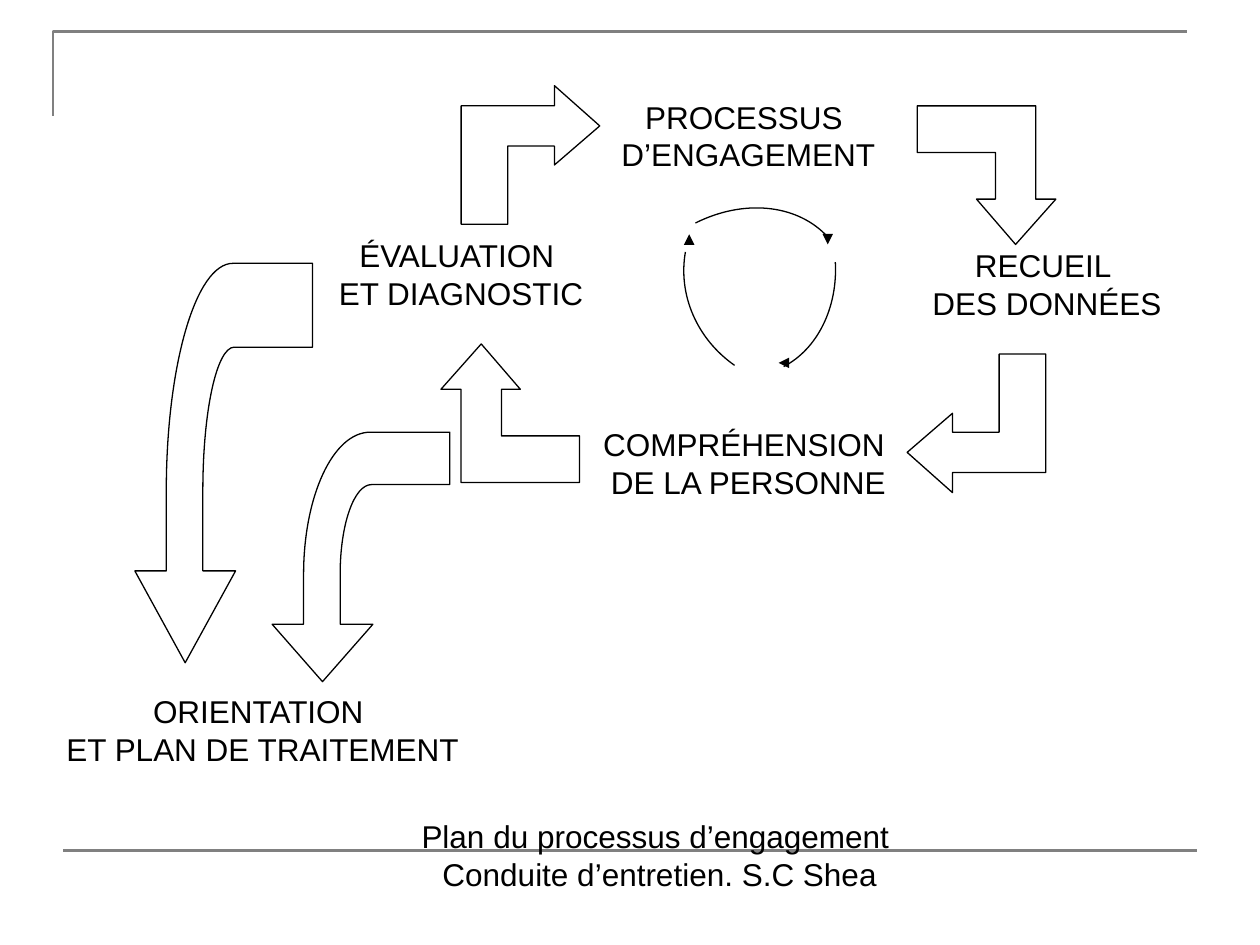
from lxml.etree import SubElement
from pptx import Presentation
from pptx.dml.color import RGBColor
from pptx.enum.shapes import MSO_CONNECTOR as Connector
from pptx.enum.text import MSO_ANCHOR as Anchor, PP_ALIGN as Align
from pptx.oxml.ns import qn
from pptx.util import Inches, Pt

BLACK, GREY = "000000", "808080"
THIN, THICK = 0.75, 1.5

LABELS = [
    (4.76, 0.68, 2.36, 0.79, "PROCESSUS ", "D’ENGAGEMENT"),
    (7.13, 1.86, 2.36, 0.79, "RECUEIL ", "DES DONNÉES"),
    (4.76, 3.28, 2.36, 0.79, "COMPRÉHENSION ", "DE LA PERSONNE"),
    (2.48, 1.78, 2.36, 0.79, "ÉVALUATION ", "ET DIAGNOSTIC"),
    (0.43, 5.4, 3.31, 0.79, "ORIENTATION ", "ET PLAN DE TRAITEMENT"),
    (3.19, 6.51, 4.09, 0.55, "Plan du processus d’engagement ", "Conduite d’entretien. S.C Shea"),
]

# Start point, then the three points of a Bézier curve
CYCLE_ARCS = [
    ((5.52, 1.77), [(5.9, 1.58), (6.31, 1.62), (6.55, 1.86)]),
    ((6.63, 2.08), [(6.65, 2.44), (6.49, 2.77), (6.22, 2.91)]),
    ((5.83, 2.9), [(5.53, 2.69), (5.38, 2.34), (5.44, 2)]),
]
CYCLE_HEADS = [
    ((6.26, 2.88), (6.18, 2.88)),
    ((6.57, 1.86), (6.57, 1.94)),
    ((5.47, 1.94), (5.47, 1.86)),
]

# Left, top and rotation of each elbow arrow
ELBOW_ARROWS = [(7.28, 0.84, 180), (7.2, 2.81, 270), (3.5, 2.73, 0), (3.66, 0.68, 90)]
ELBOW_OUTLINE = [
    (0.32, 0), (0.63, 0.36), (0.48, 0.36), (0.48, 0.73), (1.1, 0.73),
    (1.1, 1.1), (0.16, 1.1), (0.16, 0.36), (0, 0.36),
]

# Left, top and height of each curved arrow
CURVED_ARROWS = [(1.07, 2.09, 3.17), (2.16, 3.43, 1.98)]


def color(hex_code):
    return RGBColor.from_string(hex_code)


def style_line(line, hex_code, width):
    line.color.rgb = color(hex_code)
    line.width = Pt(width)


def add_outline(slide, start, steps, hex_code=BLACK, width=THIN, close=True):
    """Draw an unfilled path; a step is one point (line) or three points (curve)."""
    builder = slide.shapes.build_freeform(*map(Inches, start))
    points = [tuple(map(Inches, point)) for step in steps for point in step]
    builder.add_line_segments(points, close=close)
    outline = builder.convert_to_shape()
    segments = iter(list(outline._element.iter(qn("a:lnTo"))))
    for step in steps:
        first, *others = [next(segments) for _ in step]
        if others:
            first.tag = qn("a:cubicBezTo")
            for segment in others:
                first.append(segment[0])
                segment.getparent().remove(segment)
    outline.shadow.inherit = False
    outline.fill.background()
    style_line(outline.line, hex_code, width)
    return outline


def add_line(slide, start, end, hex_code=BLACK, width=THIN, arrow=False):
    ends = map(Inches, (*start, *end))
    connector = slide.shapes.add_connector(Connector.STRAIGHT, *ends)
    style_line(connector.line, hex_code, width)
    if arrow:
        SubElement(connector.line._get_or_add_ln(), qn("a:tailEnd"), type="triangle")
    SubElement(connector._element.spPr, qn("a:effectLst"))


def add_label(slide, left, top, width, height, *lines):
    box = slide.shapes.add_textbox(*map(Inches, (left, top, width, height)))
    frame = box.text_frame
    frame.word_wrap = False
    frame.margin_left = frame.margin_right = 0
    frame.vertical_anchor = Anchor.MIDDLE
    frame.text = "\n".join(lines)
    for paragraph in frame.paragraphs:
        paragraph.alignment = Align.CENTER
        paragraph.font.name = "Arial"
        paragraph.font.size = Pt(18)
        paragraph.font.color.rgb = color(BLACK)


def add_elbow_arrow(slide, left, top, rotation):
    start, *corners = [(left + x, top + y) for x, y in ELBOW_OUTLINE]
    add_outline(slide, start, [[corner] for corner in corners]).rotation = rotation


def add_curved_arrow(slide, left, top, height):
    """Draw an arrow whose vertical parts all stretch with its height."""
    def at(x, share):
        return left + x, top + share * height

    add_outline(slide, at(0.4, 1), [
        [at(0, 0.77)], [at(0.25, 0.77)], [at(0.25, 0.57)],
        [at(0.25, 0.26), at(0.48, 0), at(0.78, 0)],
        [at(1.41, 0)], [at(1.41, 0.21)], [at(0.79, 0.21)],
        [at(0.65, 0.21), at(0.54, 0.37), at(0.54, 0.57)],
        [at(0.54, 0.77)], [at(0.8, 0.77)],
    ])


def main():
    presentation = Presentation()
    presentation.slide_width, presentation.slide_height = Inches(10), Inches(7.5)
    slide = presentation.slides.add_slide(presentation.slide_layouts[6])

    add_outline(slide, (0.42, 0.92), [[(0.42, 0.25)], [(9.42, 0.25)]], GREY, THICK, close=False)
    add_line(slide, (0.5, 6.75), (9.5, 6.75), GREY, THICK)
    for label in LABELS:
        add_label(slide, *label)
    for start, curve in CYCLE_ARCS:
        add_outline(slide, start, [curve], close=False)
    for start, end in CYCLE_HEADS:
        add_line(slide, start, end, arrow=True)
    for arrow in ELBOW_ARROWS:
        add_elbow_arrow(slide, *arrow)
    for arrow in CURVED_ARROWS:
        add_curved_arrow(slide, *arrow)

    presentation.save("out.pptx")


if __name__ == "__main__":
    main()
